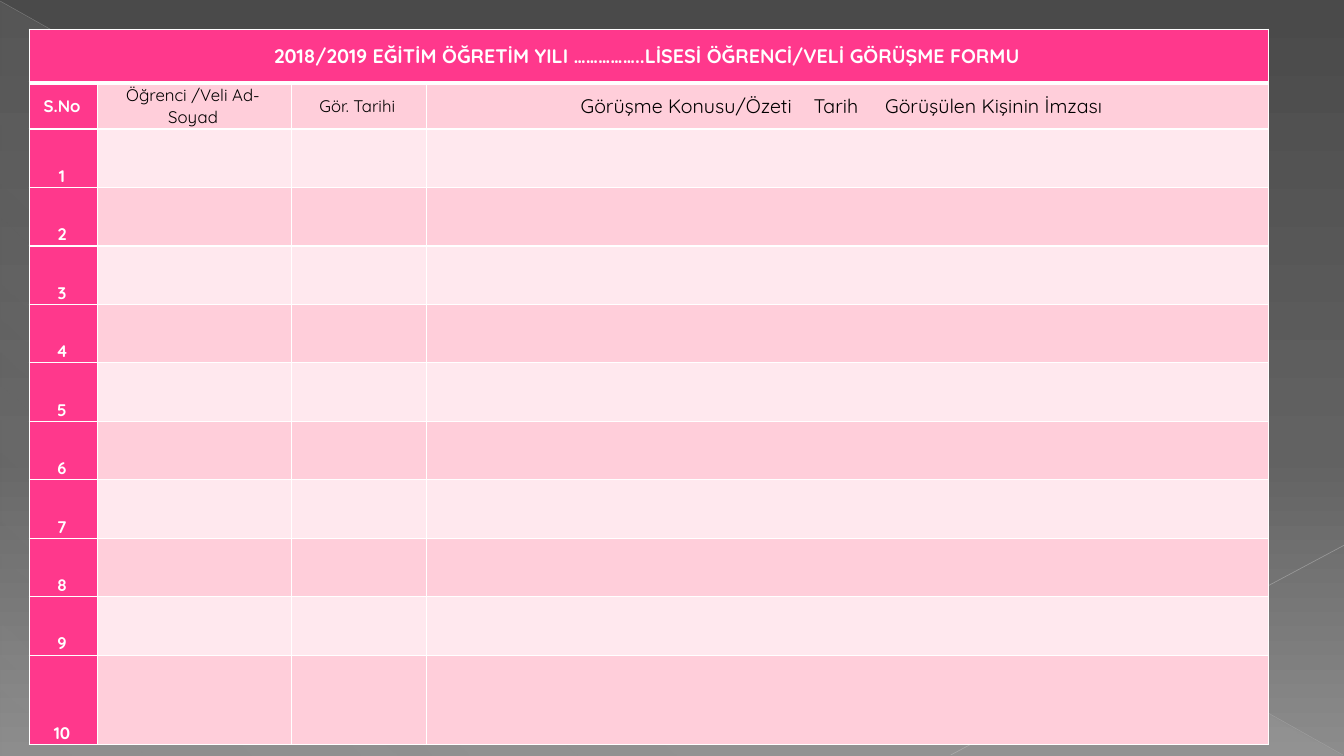
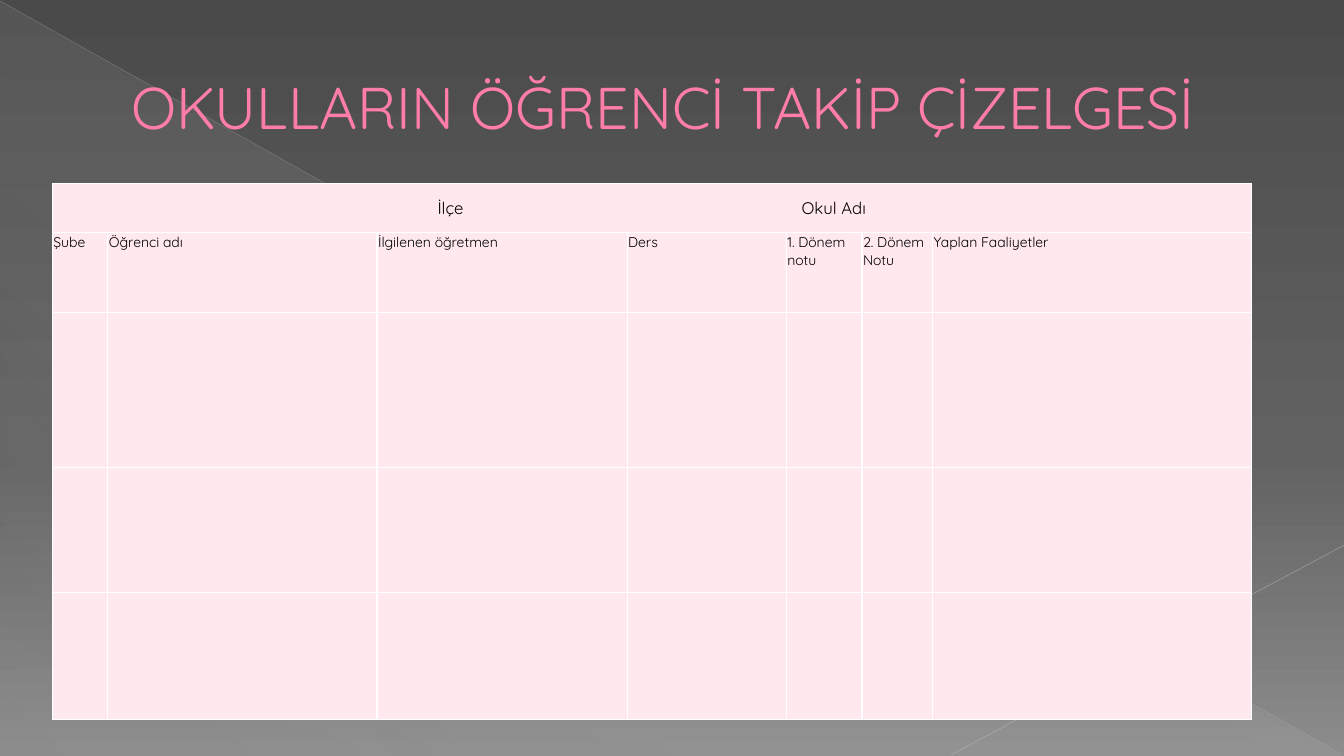
"""Build a student meeting form and a student follow-up chart."""
import dataclasses
import typing

import lxml.etree
import pptx
import pptx.dml.color
import pptx.enum.shapes
import pptx.enum.text
import pptx.oxml
import pptx.oxml.ns
import pptx.util

Inches = pptx.util.Inches
Pt = pptx.util.Pt
qn = pptx.oxml.ns.qn
ALIGN = pptx.enum.text.PP_ALIGN
ANCHOR = pptx.enum.text.MSO_ANCHOR

FONT = "Quicksand"
COLORS = {
    "white": "FFFFFF", "black": "000000", "pink": "FF388C", "band": "FFCEDA",
    "pale": "FFE8EE", "title": "FF7DA7", "outline": "B12761", "haze": "D2D2D2",
    "diagonal": "BFBFBF", "corner": "C6C6C6",
    "top": "4A4A4A", "middle": "626262", "bottom": "8C8C8C",
}


@dataclasses.dataclass(frozen=True)
class Cell:
    fill: str
    text: str = ""
    size: float = 12
    color: str = "black"
    bold: bool = False
    align: typing.Any = ALIGN.CENTER
    anchor: typing.Any = ANCHOR.MIDDLE
    tabs: tuple[float, ...] = ()


@dataclasses.dataclass(frozen=True)
class Grid:
    left: float
    top: float
    cols: list[float]
    rows: list[float]
    margins: tuple[float, float, float, float]
    cells: list[list[Cell]]
    spacing: float = 1.0
    header_rule: float = 1.0


class Line(typing.NamedTuple):
    start: tuple[float, float]
    end: tuple[float, float]
    color: str
    width: float
    opacity: int


class Stop(typing.NamedTuple):
    position: int
    color: str
    opacity: int = 100


LINES = [
    Line((0, 0.01), (13.32, 7.49), "diagonal", 0.39, 35),
    Line((13.33, 5.41), (9.43, 7.49), "corner", 0.47, 45),
]


def rgb(name: str) -> pptx.dml.color.RGBColor:
    return pptx.dml.color.RGBColor.from_string(COLORS[name])


def add_node(parent, tag: str, **attrs):
    return lxml.etree.SubElement(parent, qn(tag), {k: str(v) for k, v in attrs.items()})


def set_gradient(parent, stops: list[Stop], angle: int) -> None:
    solid = parent.find(qn("a:solidFill"))
    grad = pptx.oxml.parse_xml(f'<a:gradFill {pptx.oxml.ns.nsdecls("a")} rotWithShape="1"/>')
    gs_list = add_node(grad, "a:gsLst")
    for stop in stops:
        gs = add_node(gs_list, "a:gs", pos=stop.position * 1000)
        clr = add_node(gs, "a:srgbClr", val=COLORS[stop.color])
        add_node(clr, "a:alpha", val=stop.opacity * 1000)
    add_node(grad, "a:lin", ang=angle * 60000, scaled=0)
    parent.replace(solid, grad)


def build_master(prs, s) -> None:
    master = prs.slide_master
    master.background.fill.solid()
    set_gradient(master.element.xpath(".//p:bgPr")[0],
                 [Stop(0, "top"), Stop(60, "middle"), Stop(100, "bottom")], 90)

    sp = s.shapes.add_shape(pptx.enum.shapes.MSO_SHAPE.RIGHT_TRIANGLE,
                            Inches(0.01), Inches(0.02), Inches(13.31), Inches(7.48))
    sp.shadow.inherit = False
    sp.line.fill.background()
    sp.fill.solid()
    set_gradient(sp.element.spPr,
                 [Stop(0, "haze", 10), Stop(70, "haze", 8), Stop(100, "haze", 1)], 133)
    decor = [sp]

    for line in LINES:
        sp = s.shapes.add_connector(pptx.enum.shapes.MSO_CONNECTOR.STRAIGHT,
                                    *map(Inches, line.start + line.end))
        sp.line.color.rgb = rgb(line.color)
        sp.line.width = Pt(line.width)
        clr = sp.element.xpath(".//a:ln//a:srgbClr")[0]
        add_node(clr, "a:alpha", val=line.opacity * 1000)
        add_node(sp.element.spPr, "a:effectLst")
        decor.append(sp)

    for i, sp in enumerate(decor):
        sp.element.xpath(".//p:cNvPr")[0].set("id", str(100 + i))
        master.element.cSld.spTree.insert(2 + i, sp.element)


def format_run(r, size: float, color: str, bold: bool = False) -> None:
    r.font.name = FONT
    r.font.size = Pt(size)
    r.font.bold = bold
    r.font.color.rgb = rgb(color)


def set_borders(cell, widths: dict[str, float]) -> None:
    tc_pr = cell._tc.get_or_add_tcPr()
    for i, side in enumerate("LRTB"):
        ln = add_node(tc_pr, f"a:ln{side}", w=Pt(widths.get(side, 1)))
        add_node(add_node(ln, "a:solidFill"), "a:srgbClr", val=COLORS["white"])
        tc_pr.insert(i, ln)


def fill_cell(cell, item: Cell, grid: Grid) -> None:
    cell.fill.solid()
    cell.fill.fore_color.rgb = rgb(item.fill)
    (cell.margin_left, cell.margin_top,
     cell.margin_right, cell.margin_bottom) = map(Inches, grid.margins)
    cell.vertical_anchor = item.anchor
    if not item.text:
        return
    p = cell.text_frame.paragraphs[0]
    p.text = item.text
    p.alignment = item.align
    p.line_spacing = grid.spacing
    for r in p.runs:
        format_run(r, item.size, item.color, item.bold)
    if item.tabs:
        tab_list = add_node(p._p.get_or_add_pPr(), "a:tabLst")
        for tab in item.tabs:
            add_node(tab_list, "a:tab", pos=Inches(tab), algn="l")


def add_grid(s, grid: Grid) -> None:
    table = s.shapes.add_table(
        len(grid.rows), len(grid.cols), Inches(grid.left), Inches(grid.top),
        Inches(sum(grid.cols)), Inches(sum(grid.rows))).table
    table.first_row = table.horz_banding = False
    for col, width in zip(table.columns, grid.cols):
        col.width = Inches(width)
    for row, height in zip(table.rows, grid.rows):
        row.height = Inches(height)
    for y, items in enumerate(grid.cells):
        for x, item in enumerate(items):
            cell = table.cell(y, x)
            fill_cell(cell, item, grid)
            rule = {0: "B", 1: "T"}.get(y)
            set_borders(cell, {rule: grid.header_rule} if rule else {})
    table.cell(0, 0).merge(table.cell(0, len(grid.cols) - 1))


def meeting_form() -> Grid:
    header = Cell("pink", "2018/2019 EĞİTİM ÖĞRETİM YILI ……………..LİSESİ ÖĞRENCİ/VELİ GÖRÜŞME FORMU",
                  14, "white", True)
    labels = [
        Cell("pink", "S.No", color="white", bold=True),
        Cell("band", "Öğrenci /Veli Ad-Soyad"),
        Cell("band", "Gör. Tarihi"),
        Cell("band", "\tGörüşme Konusu/Özeti\tTarih\tGörüşülen Kişinin İmzası", 14,
             align=ALIGN.LEFT, tabs=(1.46, 3.77, 4.48)),
    ]
    cells = [[header] + [Cell("pink")] * 3, labels]
    for n in range(1, 11):
        number = Cell("pink", str(n), color="white", bold=True, anchor=ANCHOR.BOTTOM)
        cells.append([number] + [Cell("pale" if n % 2 else "band")] * 3)
    return Grid(0.29, 0.29, [0.68, 1.92, 1.34, 8.35], [0.53, 0.46] + [0.58] * 9 + [0.89],
                (0.07, 0, 0.1, 0.01), cells, spacing=1.07, header_rule=3)


def follow_up_chart() -> Grid:
    header = Cell("pale", "\tİlçe\tOkul Adı", align=ALIGN.LEFT, tabs=(3.81, 7.42))
    labels = ["Şube", "Öğrenci adı", "İlgilenen öğretmen", "Ders",
              "1. Dönem notu", "2. Dönem Notu", "Yaplan Faaliyetler"]
    blank = [Cell("pale")] * len(labels)
    cells = [
        [header] + blank[1:],
        [Cell("pale", text, 10, align=ALIGN.LEFT, anchor=ANCHOR.TOP) for text in labels],
    ] + [blank] * 3
    return Grid(0.52, 1.82, [0.55, 2.67, 2.48, 1.58, 0.75, 0.7, 3.16],
                [0.49, 0.79, 1.54, 1.24, 1.26], (0.01, 0.01, 0.01, 0), cells)


def set_title(s, text: str) -> None:
    sp = s.shapes.title
    sp.left, sp.top, sp.width, sp.height = map(Inches, (0.67, 0.29, 12, 1.53))
    tf = sp.text_frame
    tf.text = text
    tf.word_wrap = True
    tf.vertical_anchor = ANCHOR.MIDDLE
    p = tf.paragraphs[0]
    p.alignment = ALIGN.LEFT
    p._p.get_or_add_pPr().set("marL", str(Inches(0.53)))
    r = p.runs[0]
    format_run(r, 42, "title")
    r_pr = r._r.get_or_add_rPr()
    ln = add_node(r_pr, "a:ln", w=Pt(0.5))
    add_node(add_node(ln, "a:solidFill"), "a:srgbClr", val=COLORS["outline"])
    r_pr.insert(0, ln)


def main() -> None:
    prs = pptx.Presentation()
    prs.slide_width, prs.slide_height = Inches(13.33), Inches(7.5)

    s = prs.slides.add_slide(prs.slide_layouts.get_by_name("Blank"))
    build_master(prs, s)
    add_grid(s, meeting_form())

    s = prs.slides.add_slide(prs.slide_layouts.get_by_name("Title Only"))
    set_title(s, "OKULLARIN ÖĞRENCİ TAKİP ÇİZELGESİ")
    add_grid(s, follow_up_chart())

    prs.save("out.pptx")


if __name__ == "__main__":
    main()
